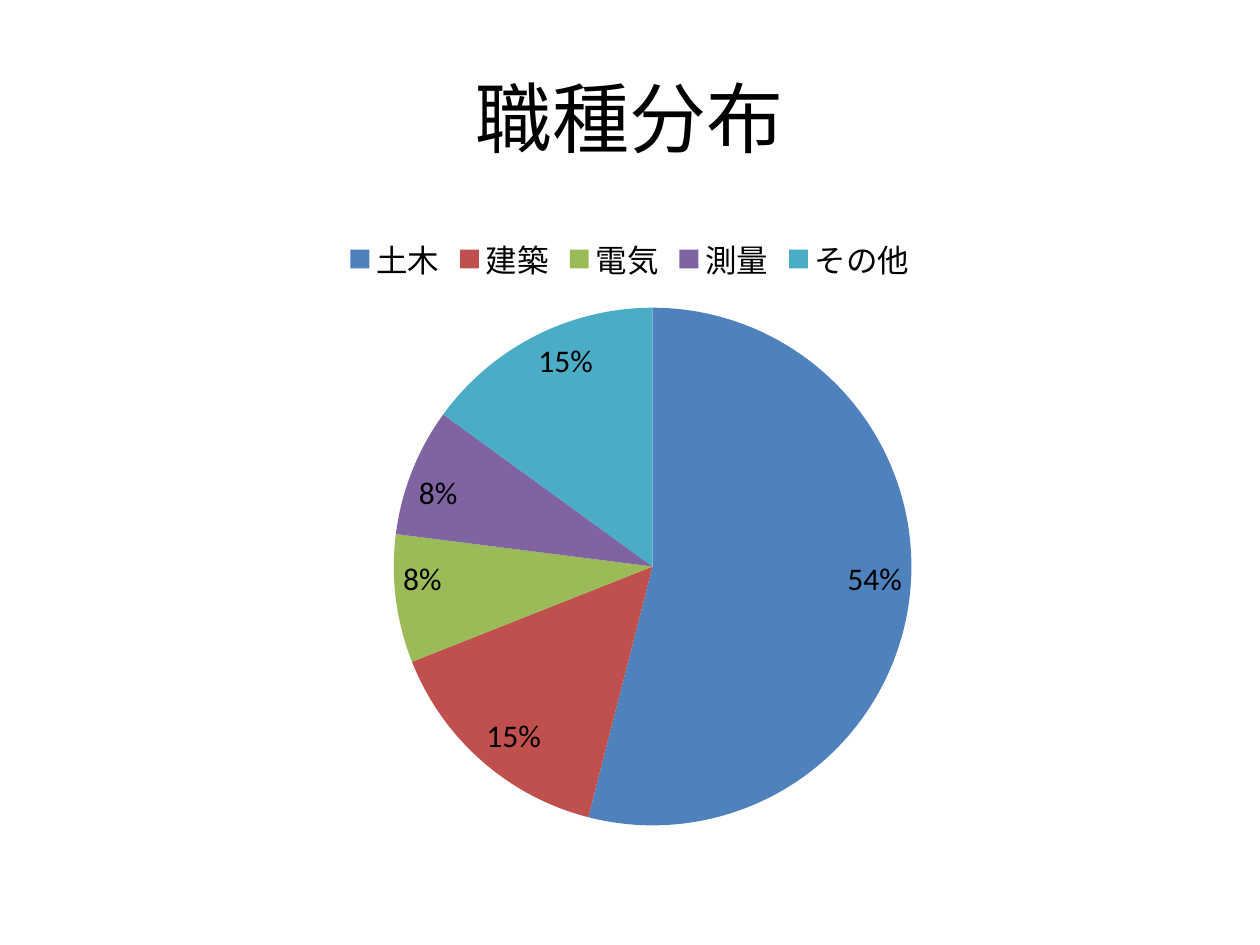
from dataclasses import dataclass

import lxml.etree
import pptx
import pptx.chart.chart
import pptx.chart.data
import pptx.dml.color
import pptx.dml.fill
import pptx.enum.chart
import pptx.enum.text
import pptx.oxml.ns
import pptx.util
from pptx.util import Inches

FONT = "Calibri"
BLACK = "000000"


@dataclass
class Occupation:
    name: str
    percent: int
    color: str


OCCUPATIONS = [
    Occupation("土木", 54, "4F81BD"),
    Occupation("建築", 15, "C0504D"),
    Occupation("電気", 8, "9BBB59"),
    Occupation("測量", 8, "8064A2"),
    Occupation("その他", 15, "4BACC6"),
]


def set_color(fill: pptx.dml.fill.FillFormat, color: str) -> None:
    fill.solid()
    fill.fore_color.rgb = pptx.dml.color.RGBColor.from_string(color)


def style_font(font, size: int) -> None:
    font.name = FONT
    font.size = pptx.util.Pt(size)
    set_color(font.fill, BLACK)


def place_plot(chart: pptx.chart.chart.Chart, **fractions: float) -> None:
    """Fix the inner plot area as fractions of the chart frame."""
    qn = pptx.oxml.ns.qn
    plot_area = chart._chartSpace.find(".//" + qn("c:plotArea"))
    layout = plot_area.find(qn("c:layout"))
    if layout is None:
        layout = lxml.etree.Element(qn("c:layout"))
        plot_area.insert(0, layout)
    manual = lxml.etree.SubElement(layout, qn("c:manualLayout"))
    settings = {"layoutTarget": "inner", "xMode": "edge", "yMode": "edge", **fractions}
    for tag, value in settings.items():
        lxml.etree.SubElement(manual, qn("c:" + tag)).set("val", str(value))


def add_pie(page, occupations: list[Occupation]) -> None:
    data = pptx.chart.data.CategoryChartData()
    data.categories = [job.name for job in occupations]
    data.add_series("Series 1", [job.percent for job in occupations])
    chart = page.shapes.add_chart(
        pptx.enum.chart.XL_CHART_TYPE.PIE,
        Inches(0.5), Inches(1.75), Inches(9), Inches(4.95), data,
    ).chart
    chart.has_title = False
    style_font(chart.font, 18)
    place_plot(chart, x=0.29, y=0.14, w=0.46, h=0.83)

    # Legend
    chart.has_legend = True
    chart.legend.position = pptx.enum.chart.XL_LEGEND_POSITION.TOP
    chart.legend.include_in_layout = False
    style_font(chart.legend.font, 18)

    # Slices and percentage labels
    plot = chart.plots[0]
    plot.vary_by_categories = True
    for index, job in enumerate(occupations):
        set_color(plot.series[0].points[index].format.fill, job.color)
    plot.has_data_labels = True
    labels = plot.data_labels
    labels.show_percentage = True
    labels.show_value = False
    labels.number_format = "0%"
    labels.number_format_is_linked = False
    labels.position = pptx.enum.chart.XL_LABEL_POSITION.INSIDE_END
    style_font(labels.font, 18)


def main() -> None:
    deck = pptx.Presentation()
    deck.slide_width, deck.slide_height = Inches(10), Inches(7.5)
    page = deck.slides.add_slide(deck.slide_layouts[5])
    set_color(page.background.fill, "FFFFFF")

    # Title
    title = page.shapes.title
    title.left, title.top = Inches(0.5), Inches(0.3)
    title.width, title.height = Inches(9), Inches(1.25)
    title.text_frame.text = "職種分布"
    title.text_frame.vertical_anchor = pptx.enum.text.MSO_ANCHOR.MIDDLE
    para = title.text_frame.paragraphs[0]
    para.alignment = pptx.enum.text.PP_ALIGN.CENTER
    style_font(para.runs[0].font, 44)

    # Chart
    add_pie(page, OCCUPATIONS)
    deck.save("out.pptx")


if __name__ == "__main__":
    main()
